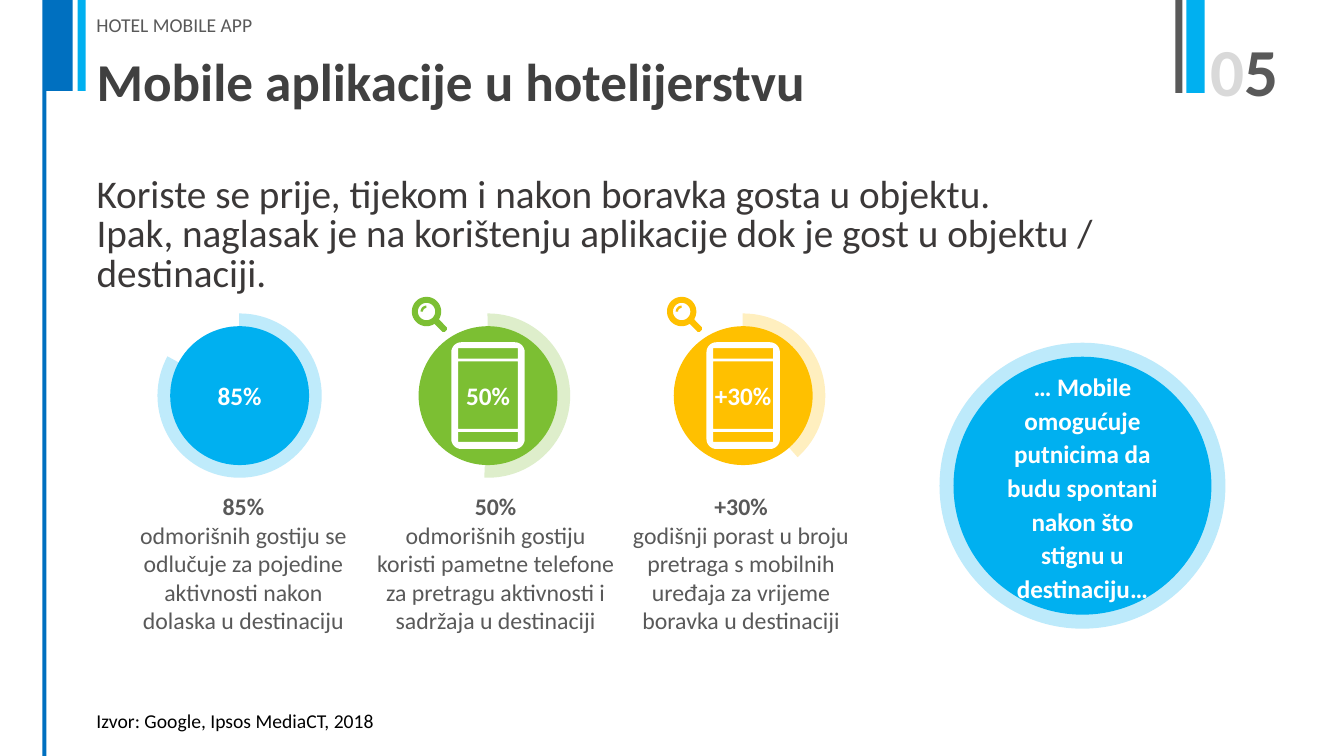
import math
from dataclasses import dataclass

from lxml import etree
from pptx import Presentation
from pptx.dml.color import RGBColor
from pptx.enum.shapes import MSO_SHAPE
from pptx.enum.text import MSO_ANCHOR, MSO_AUTO_SIZE, PP_ALIGN
from pptx.oxml.ns import qn
from pptx.util import Cm, Pt

RECT, OVAL, ARC = MSO_SHAPE.RECTANGLE, MSO_SHAPE.OVAL, MSO_SHAPE.BLOCK_ARC
TOP, MIDDLE = MSO_ANCHOR.TOP, MSO_ANCHOR.MIDDLE
LEFT, CENTER = PP_ALIGN.LEFT, PP_ALIGN.CENTER
NO_AUTOFIT = MSO_AUTO_SIZE.NONE

FONT = "Calibri"
SKY, BLUE, GRAY, WHITE = "00B0F0", "0070C0", "595959", "FFFFFF"
MARGIN_LEFT = 2.18
DIAL_Y, DIAL_SIZE, RING_SIZE = 9.97, 3.5, 4.14
CAPTION_LEFT, CAPTION_TOP, CAPTION_STEP, CAPTION_HEIGHT = 2.92, 12.27, 6.27, 3.89
LENS_DX, LENS_DY = -1.55, -2.12
PHONE_WIDTH, PHONE_HEIGHT, PHONE_CORNER, PHONE_RIM = 1.85, 2.69, 0.25, 0.17
PHONE_WINDOWS = ((0.15, 0.41), (0.48, 2.18), (2.26, 2.51))

Points = list[tuple[float, float]]


@dataclass
class Bar:
    left: float
    width: float
    height: float
    color: str


@dataclass
class Statistic:
    value: str
    description: str
    center: float
    color: str
    sweep: float
    caption_width: float
    mobile: bool


BARS = (
    Bar(29.9, 0.46, 2.34, SKY),
    Bar(29.62, 0.18, 2.34, GRAY),
    Bar(1.96, 0.2, 2.29, SKY),
    Bar(1.12, 0.71, 2.29, BLUE),
    Bar(1.07, 0.1, 19.05, BLUE),
)
STATISTICS = (
    Statistic("85%", "odmorišnih gostiju se odlučuje za pojedine aktivnosti nakon dolaska u destinaciju",
              6.04, SKY, 144.87, 6.43, False),
    Statistic("50%", "odmorišnih gostiju koristi pametne telefone za pretragu aktivnosti i sadržaja u destinaciji",
              12.3, "7CBF33", 214.43, 6.6, True),
    Statistic("+30%", "godišnji porast u broju pretraga s mobilnih uređaja za vrijeme boravka u destinaciji",
              18.73, "FFC000", 24.87, 6.43, True),
)


def rgb(color: str) -> RGBColor:
    return RGBColor.from_string(color)


def fade(parent, percent: int) -> None:
    color = parent.find(qn("a:solidFill")).find(qn("a:srgbClr"))
    etree.SubElement(color, qn("a:alpha")).set("val", str(percent * 1000))


def paint(shape, color: str) -> None:
    shape.shadow.inherit = False
    shape.fill.solid()
    shape.fill.fore_color.rgb = rgb(color)
    shape.line.fill.background()


def add_block(slide, kind, left: float, top: float, width: float, height: float, color: str):
    block = slide.shapes.add_shape(kind, Cm(left), Cm(top), Cm(width), Cm(height))
    paint(block, color)
    return block


def add_disc(slide, kind, center_x: float, center_y: float, size: float, color: str):
    return add_block(slide, kind, center_x - size / 2, center_y - size / 2, size, size, color)


def add_run(paragraph, text: str, size: float, color: str, bold: bool = False):
    run = paragraph.add_run()
    run.text = text
    run.font.name = FONT
    run.font.size = Pt(size)
    run.font.bold = bold
    run.font.color.rgb = rgb(color)
    return run


def set_frame(shape, anchor, wrap: bool = True):
    frame = shape.text_frame
    frame.word_wrap = wrap
    frame.auto_size = NO_AUTOFIT
    frame.vertical_anchor = anchor
    return frame


def add_lines(frame, lines: tuple, size: float, color: str, bold: bool, align, spacing: float | None = None) -> None:
    for index, line in enumerate(lines):
        paragraph = frame.add_paragraph() if index else frame.paragraphs[0]
        etree.SubElement(paragraph._p.get_or_add_pPr(), qn("a:buNone"))
        paragraph._p.pPr.set("marL", "0")
        paragraph._p.pPr.set("indent", "0")
        paragraph.alignment = align
        paragraph.space_before = Pt(0)
        if spacing:
            paragraph.line_spacing = Pt(spacing)
        add_run(paragraph, line, size, color, bold)


def place(shape, left: float, top: float, width: float, height: float) -> None:
    shape.left, shape.top, shape.width, shape.height = Cm(left), Cm(top), Cm(width), Cm(height)


def add_label(slide, left: float, top: float, width: float, height: float, wrap: bool = True):
    label = slide.shapes.add_textbox(Cm(left), Cm(top), Cm(width), Cm(height))
    return set_frame(label, TOP, wrap)


def arc(x: float, y: float, radius: float, start: int, end: int, steps: int = 24) -> Points:
    angles = (math.radians(start + (end - start) * step / steps) for step in range(steps + 1))
    return [(x + radius * math.cos(angle), y + radius * math.sin(angle)) for angle in angles]


def add_outline(slide, contours: list[Points], color: str) -> None:
    scaled = [[(Cm(x), Cm(y)) for x, y in contour] for contour in contours]
    builder = slide.shapes.build_freeform(*scaled[0][0], scale=1.0)
    for index, contour in enumerate(scaled):
        if index:
            builder.move_to(*contour[0])
        builder.add_line_segments(contour[1:], close=True)
    paint(builder.convert_to_shape(), color)


def add_phone(slide, center_x: float, center_y: float) -> None:
    left, top = center_x - PHONE_WIDTH / 2, center_y - PHONE_HEIGHT / 2
    near, far_x, far_y = PHONE_CORNER, PHONE_WIDTH - PHONE_CORNER, PHONE_HEIGHT - PHONE_CORNER
    corners = ((near, near, 180), (far_x, near, 270), (far_x, far_y, 0), (near, far_y, 90))
    case = [point for x, y, start in corners
            for point in arc(left + x, top + y, PHONE_CORNER, start, start + 90, 8)]
    inner_left, inner_right = left + PHONE_RIM, left + PHONE_WIDTH - PHONE_RIM
    windows = [[(inner_left, top + upper), (inner_left, top + lower),
                (inner_right, top + lower), (inner_right, top + upper)]
               for upper, lower in PHONE_WINDOWS]
    add_outline(slide, [case, *windows], WHITE)


def add_magnifier(slide, x: float, y: float, color: str) -> None:
    handle = [(x + dx, y + dy) for dx, dy in ((0.51, 0.4), (0.51, 0.46), (0.46, 0.51), (0.4, 0.51))]
    body = arc(x, y, 0.37, 57, 392, 40) + handle
    lens = arc(x, y, 0.22, 360, 0)
    glint = arc(x, y, 0.15, 180, 270, 8) + arc(x, y, 0.09, 270, 180, 8)
    add_outline(slide, [body, lens, glint], color)


def add_caption(slide, index: int, statistic: Statistic) -> None:
    caption = add_block(slide, RECT, CAPTION_LEFT + index * CAPTION_STEP, CAPTION_TOP,
                        statistic.caption_width, CAPTION_HEIGHT, WHITE)
    frame = set_frame(caption, TOP)
    add_lines(frame, (statistic.value, statistic.description), 17, GRAY, False, CENTER)
    frame.paragraphs[0].runs[0].font.bold = True


def add_dial(slide, statistic: Statistic) -> None:
    ring = add_disc(slide, ARC, statistic.center, DIAL_Y, RING_SIZE, statistic.color)
    for index, value in enumerate((statistic.sweep, 108.22, 0.144)):
        ring.adjustments[index] = value
    ring.rotation = 270
    ring.element.spPr.find(qn("a:xfrm")).set("flipH", "1")
    fade(ring.element.spPr, 25)
    dial = add_disc(slide, OVAL, statistic.center, DIAL_Y, DIAL_SIZE, statistic.color)
    add_lines(set_frame(dial, MIDDLE), (statistic.value,), 18, WHITE, True, CENTER)
    if statistic.mobile:
        add_phone(slide, statistic.center, DIAL_Y)
        add_magnifier(slide, statistic.center + LENS_DX, DIAL_Y + LENS_DY, statistic.color)


def main() -> None:
    deck = Presentation()
    deck.slide_width, deck.slide_height = Cm(33.87), Cm(19.05)
    slide = deck.slides.add_slide(deck.slide_layouts[1])
    title, intro = slide.placeholders

    for bar in BARS:
        add_block(slide, RECT, bar.left, 0, bar.width, bar.height, bar.color)
    page_number = add_label(slide, 30.15, 0.56, 3.28, 2.36)
    page_number.margin_left = page_number.margin_right = Cm(0.36)
    page_number.margin_top = page_number.margin_bottom = Cm(0.18)
    for digit, color in (("0", "D9D9D9"), ("5", GRAY)):
        run = add_run(page_number.paragraphs[0], digit, 48, color, True)
        run.font._element.set("spc", "-420")
    add_lines(add_label(slide, MARGIN_LEFT, 0.2, 13.16, 0.86), ("HOTEL MOBILE APP",), 14, GRAY, False, LEFT)

    place(title, MARGIN_LEFT, 1.3, 19.96, 1.68)
    add_lines(set_frame(title, TOP), ("Mobile aplikacije u hotelijerstvu",), 38, "404040", True, LEFT, 40)
    place(intro, MARGIN_LEFT, 4.34, 29.82, 2.26)
    add_lines(set_frame(intro, TOP), (
        "Koriste se prije, tijekom i nakon boravka gosta u objektu.",
        "Ipak, naglasak je na korištenju aplikacije dok je gost u objektu / destinaciji.",
    ), 28, "3B3838", False, LEFT, 28)
    add_lines(add_label(slide, MARGIN_LEFT, 17.73, 7.57, 0.86, False),
              ("Izvor: Google, Ipsos MediaCT, 2018",), 14, "000000", False, LEFT)

    for index, statistic in enumerate(STATISTICS):
        add_caption(slide, index, statistic)
    for statistic in STATISTICS:
        add_dial(slide, statistic)

    quote = add_disc(slide, OVAL, 27.28, 12.24, 6.5, SKY)
    quote.line.color.rgb = rgb(SKY)
    quote.line.width = Pt(20)
    fade(quote.element.spPr.find(qn("a:ln")), 25)
    add_lines(set_frame(quote, MIDDLE), (
        "… Mobile omogućuje putnicima da budu spontani nakon što stignu u destinaciju…",
    ), 18, WHITE, True, CENTER, 24)
    deck.save("out.pptx")


if __name__ == "__main__":
    main()
